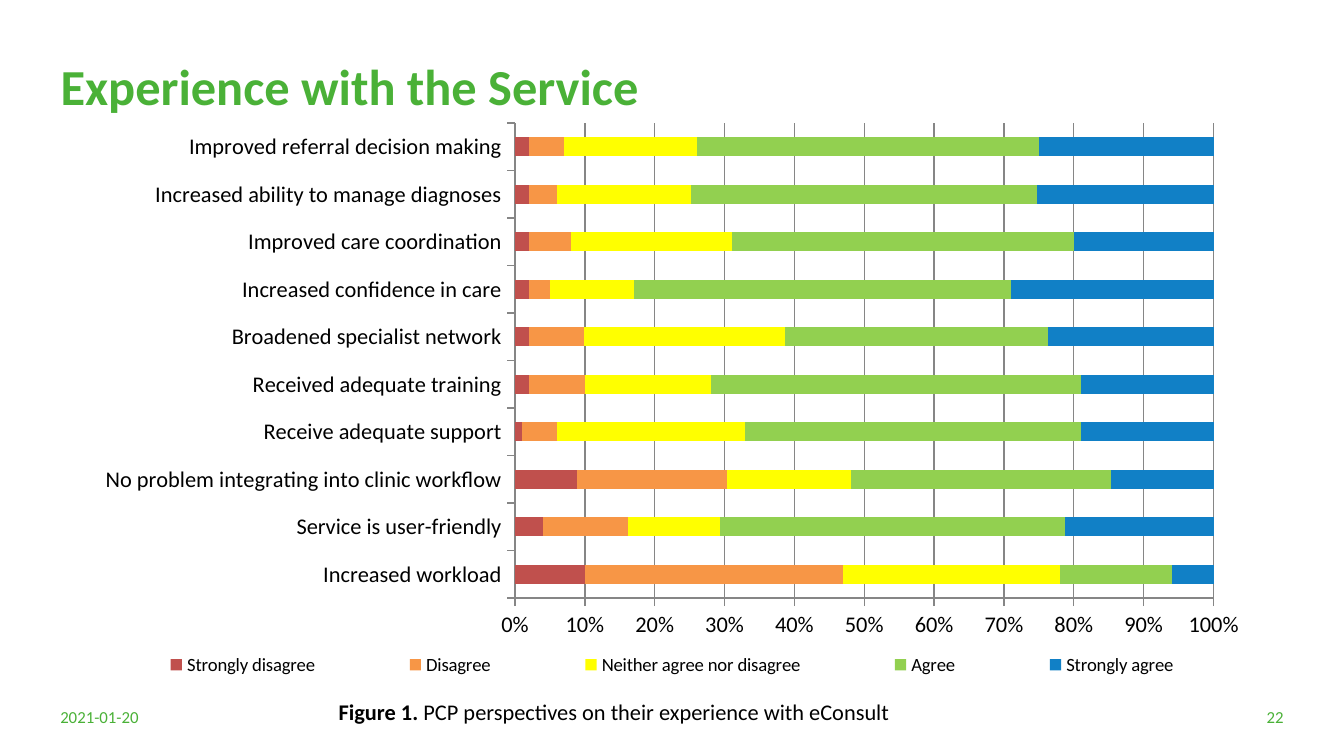
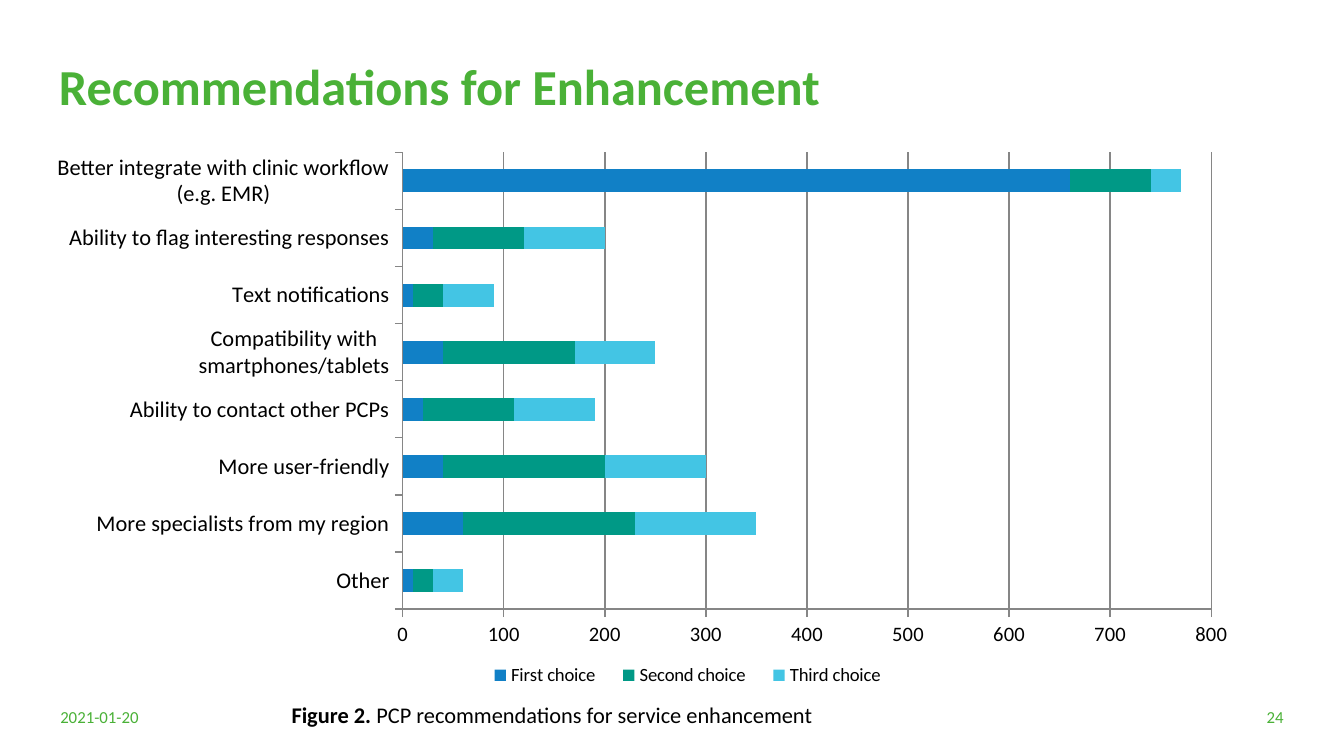
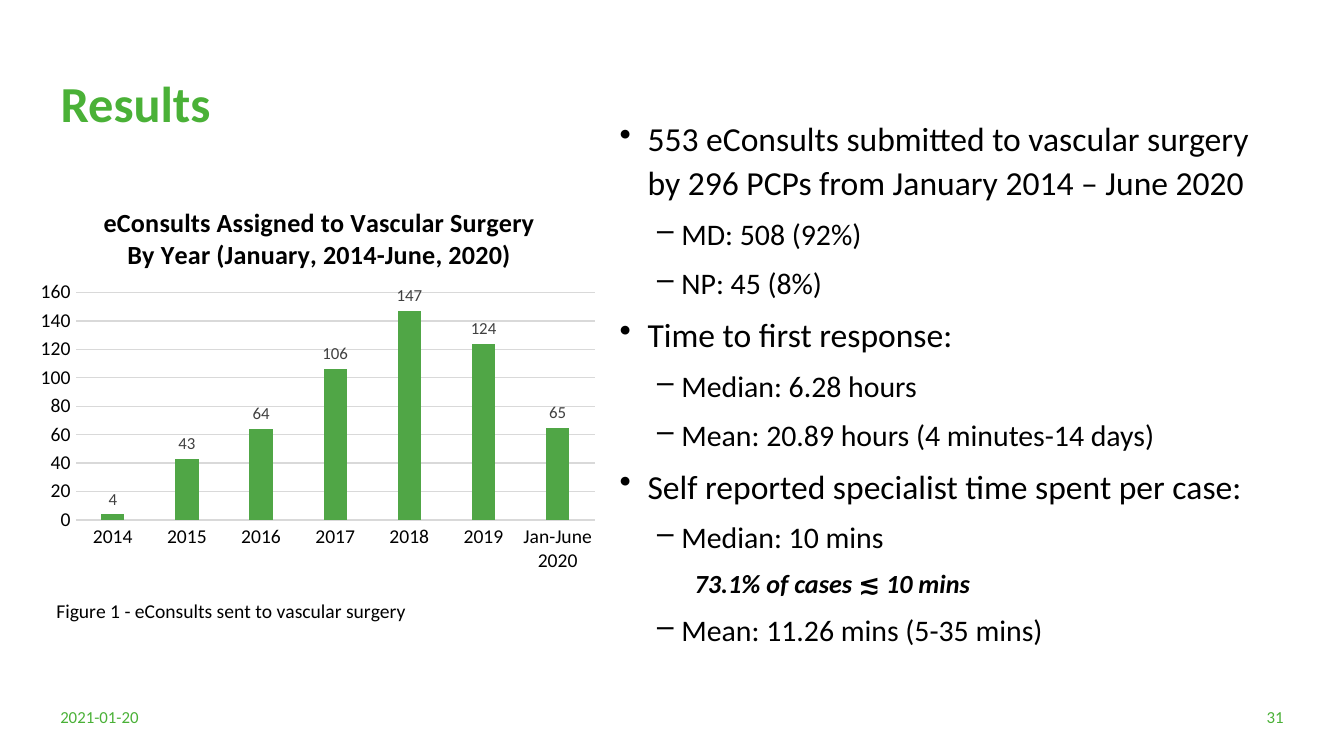
from lxml import etree
from pptx import Presentation
from pptx.chart.data import CategoryChartData
from pptx.dml.color import RGBColor
from pptx.enum.chart import XL_CHART_TYPE, XL_LABEL_POSITION, XL_LEGEND_POSITION, XL_TICK_MARK
from pptx.enum.text import MSO_ANCHOR, MSO_AUTO_SIZE, PP_ALIGN
from pptx.oxml import parse_xml
from pptx.oxml.ns import nsdecls, qn
from pptx.util import Cm, Pt

FONT = "Calibri"
GREEN, BLACK, GREY, PALE_GREY = "4AB137", "000000", "868686", "D9D9D9"
BLUE = "1180C6"
DATE = "2021-01-20"

AGREEMENT_CATEGORIES = [
    "Increased workload", "Service is user-friendly",
    "No problem integrating into clinic workflow", "Receive adequate support",
    "Received adequate training", "Broadened specialist network",
    "Increased confidence in care", "Improved care coordination",
    "Increased ability to manage diagnoses", "Improved referral decision making",
]
AGREEMENT_SERIES = [
    ("Strongly disagree", "C0504D", [10, 4, 9, 1, 2, 2, 2, 2, 2, 2]),
    ("Disagree", "F79646", [37, 12, 22, 5, 8, 8, 3, 6, 4, 5]),
    ("Neither agree nor disagree", "FFFF00", [31, 13, 18, 27, 18, 29, 12, 23, 19, 19]),
    ("Agree", "92D050", [16, 49, 38, 48, 53, 38, 54, 49, 49, 49]),
    ("Strongly agree", BLUE, [6, 21, 15, 19, 19, 24, 29, 20, 25, 25]),
]
ENHANCEMENT_CATEGORIES = [
    "Other", "More specialists from my region", "More user-friendly",
    "Ability to contact other PCPs", "Compatibility with smartphones/tablets",
    "Text notifications", "Ability to flag interesting responses",
    "Better integrate with clinic workflow (e.g. EMR)",
]
ENHANCEMENT_SERIES = [
    ("First choice", BLUE, [10, 60, 40, 20, 40, 10, 30, 660]),
    ("Second choice", "009986", [20, 170, 160, 90, 130, 30, 90, 80]),
    ("Third choice", "43C5E4", [30, 120, 100, 80, 80, 50, 80, 30]),
]
YEARS = ["2014", "2015", "2016", "2017", "2018", "2019", "Jan-June 2020"]
YEAR_SERIES = [("Series 1", "50A646", [4, 43, 64, 106, 147, 124, 65])]

# Outline level: bullet, left margin and first-line indent in cm, font format
LEVELS = [
    ("•", 0.53, -0.53, {"size": Pt(18)}),
    ("–", 1.17, -0.46, {"size": Pt(16)}),
    (None, 1.42, 0, {"size": Pt(14), "bold": True, "italic": True}),
]
RESULTS = [
    (0, "553 eConsults submitted to vascular surgery by 296 PCPs from January 2014 – June 2020"),
    (1, "MD: 508 (92%)"),
    (1, "NP: 45 (8%)"),
    (0, "Time to first response:"),
    (1, "Median: 6.28 hours"),
    (1, "Mean: 20.89 hours (4 minutes-14 days)"),
    (0, "Self reported specialist time spent per case:"),
    (1, "Median: 10 mins"),
    (2, "73.1% of cases ≲ 10 mins"),
    (1, "Mean: 11.26 mins (5-35 mins)"),
]


def set_values(target, values):
    for name, value in values.items():
        setattr(target, name, value)


def rgb(color):
    return RGBColor.from_string(color)


def format_font(font, color=BLACK, **values):
    set_values(font, {"name": FONT, **values})
    font.color.rgb = rgb(color)


def add_run(paragraph, text, **values):
    run = paragraph.add_run()
    run.text = text
    format_font(run.font, **values)


def add_text_box(slide, box, **frame_values):
    frame = slide.shapes.add_textbox(*map(Cm, box)).text_frame
    set_values(frame, {"word_wrap": True, **frame_values})
    return frame


def add_title_slide(presentation, title, number, left=0.89, top=0.43):
    """Add a slide with its title, date and slide number."""
    slide = presentation.slides.add_slide(presentation.slide_layouts[5])
    shape = slide.shapes.title
    position = dict(zip(("left", "top", "width", "height"), map(Cm, (left, top, 23.62, 2.59))))
    set_values(shape, position)
    set_values(shape.text_frame, {"vertical_anchor": MSO_ANCHOR.MIDDLE, "word_wrap": True,
                                  "auto_size": MSO_AUTO_SIZE.NONE})
    paragraph = shape.text_frame.paragraphs[0]
    set_values(paragraph, {"alignment": PP_ALIGN.LEFT, "line_spacing": 0.8})
    add_run(paragraph, title, size=Pt(27), bold=True, color=GREEN)

    for text, footer_left, width, alignment in ((DATE, 0.89, 2.74, PP_ALIGN.LEFT),
                                                (number, 23.27, 1.24, PP_ALIGN.RIGHT)):
        frame = add_text_box(slide, (footer_left, 13.28, width, 0.58),
                             vertical_anchor=MSO_ANCHOR.BOTTOM)
        paragraph = frame.paragraphs[0]
        paragraph.alignment = alignment
        add_run(paragraph, text, size=Pt(9), color=GREEN)
    return slide


def add_caption(slide, box, label, text):
    frame = add_text_box(slide, box, auto_size=MSO_AUTO_SIZE.SHAPE_TO_FIT_TEXT)
    paragraph = frame.paragraphs[0]
    add_run(paragraph, label, size=Pt(12), bold=True)
    add_run(paragraph, text, size=Pt(12), bold=False)


def add_outline(slide, box, items):
    frame = add_text_box(slide, box)
    for index, (level, text) in enumerate(items):
        bullet, margin, indent, font_values = LEVELS[level]
        paragraph = frame.add_paragraph() if index else frame.paragraphs[0]
        set_values(paragraph, {"level": level, "line_spacing": 1.1,
                               "space_before": Pt(5.1 if index else 0)})
        properties = paragraph._p.get_or_add_pPr()
        properties.set("marL", str(Cm(margin)))
        properties.set("indent", str(Cm(indent)))
        if bullet:
            etree.SubElement(properties, qn("a:buChar"), char=bullet)
        else:
            etree.SubElement(properties, qn("a:buNone"))
        add_run(paragraph, text, **font_values)


def set_layout(element, index, inner=False, **fractions):
    """Place a chart part by fractions of the chart's width and height."""
    for layout in element.findall(qn("c:layout")):
        element.remove(layout)
    target = '<c:layoutTarget val="inner"/>' if inner else ""
    modes = "".join(f'<c:{key}Mode val="edge"/>' for key in "xy")
    values = "".join(f'<c:{key} val="{value}"/>' for key, value in fractions.items())
    element.insert(index, parse_xml(
        f'<c:layout {nsdecls("c")}><c:manualLayout>{target}{modes}{values}'
        "</c:manualLayout></c:layout>"))


def format_axis(axis, size, line, tick):
    axis.major_tick_mark = tick
    axis.minor_tick_mark = XL_TICK_MARK.NONE
    format_font(axis.tick_labels.font, size=Pt(size))
    if line:
        axis.format.line.color.rgb = rgb(line)
        axis.format.line.width = Pt(0.75)
    else:
        axis.format.line.fill.background()


def add_bar_chart(slide, kind, box, categories, series_rows, plot_area, gap, overlap,
                  line, tick, sizes, value_line, scale):
    data = CategoryChartData()
    data.categories = categories
    for name, _, values in series_rows:
        data.add_series(name, values)
    chart = slide.shapes.add_chart(kind, *map(Cm, box), data).chart
    set_values(chart, {"has_title": False, "has_legend": False})
    format_font(chart.font, size=Pt(12))
    plot = chart.plots[0]
    set_values(plot, {"gap_width": gap, "overlap": overlap, "vary_by_categories": False})
    for series, (_, color, _) in zip(plot.series, series_rows):
        series.format.fill.solid()
        series.format.fill.fore_color.rgb = rgb(color)
    format_axis(chart.category_axis, sizes[0], line, tick)
    format_axis(chart.value_axis, sizes[1], value_line, tick)
    set_values(chart.value_axis, {"has_major_gridlines": True, **scale})
    gridline = chart.value_axis.major_gridlines.format.line
    gridline.color.rgb = rgb(line)
    gridline.width = Pt(0.75)
    set_layout(chart._chartSpace.chart.plotArea, 0, inner=True, **plot_area)
    return chart


def add_stacked_chart(slide, kind, box, categories, series_rows, plot_area, legend_area,
                      value_size, scale):
    chart = add_bar_chart(slide, kind, box, categories, series_rows, plot_area, 150, 100,
                          GREY, XL_TICK_MARK.OUTSIDE, (12, value_size), GREY, scale)
    chart.has_legend = True
    set_values(chart.legend, {"position": XL_LEGEND_POSITION.BOTTOM,
                              "include_in_layout": False})
    format_font(chart.legend.font, size=Pt(10))
    set_layout(chart.legend._element, 1, **legend_area)
    return chart


def add_chart_heading(title, text, x, y, **font_values):
    add_run(title.text_frame.paragraphs[0], text, **font_values)
    set_layout(title._element, 1, x=x, y=y)


def add_year_chart(slide):
    chart = add_bar_chart(
        slide, XL_CHART_TYPE.COLUMN_CLUSTERED, (0.56, 3.33, 10.9, 8.79), YEARS, YEAR_SERIES,
        {"x": 0.08, "y": 0.25, "w": 0.9, "h": 0.49}, 219, -27, PALE_GREY,
        XL_TICK_MARK.NONE, (10.5, 10.5), None,
        {"minimum_scale": 0, "maximum_scale": 160, "major_unit": 20})
    add_chart_heading(chart.chart_title,
                      "eConsults Assigned to Vascular Surgery By Year (January, 2014-June, 2020)",
                      0.12, 0.05, size=Pt(14), bold=True)
    add_chart_heading(chart.category_axis.axis_title,
                      "Figure 1 - eConsults sent to vascular surgery",
                      0.04, 0.9, size=Pt(10.5), bold=False)
    labels = chart.plots[0].series[0].data_labels
    set_values(labels, {"show_value": True, "position": XL_LABEL_POSITION.OUTSIDE_END})
    format_font(labels.font, size=Pt(9), color="404040")


def main():
    presentation = Presentation()
    set_values(presentation, {"slide_width": Cm(25.4), "slide_height": Cm(14.29)})

    slide = add_title_slide(presentation, "Experience with the Service", "22")
    chart = add_stacked_chart(
        slide, XL_CHART_TYPE.BAR_STACKED_100, (1.55, 2.11, 22.3, 10.95),
        AGREEMENT_CATEGORIES, AGREEMENT_SERIES,
        {"x": 0.367, "y": 0.02, "w": 0.592, "h": 0.82},
        {"x": 0, "y": 0.92, "w": 1, "h": 0.07}, 12, {"major_unit": 0.1})
    set_values(chart.value_axis.tick_labels,
               {"number_format": "0%", "number_format_is_linked": False})
    add_caption(slide, (6.15, 13.08, 11.35, 0.76), "Figure 1. ",
                "PCP perspectives on their experience with eConsult")

    slide = add_title_slide(presentation, "Recommendations for Enhancement", "24", left=0.86)
    add_stacked_chart(
        slide, XL_CHART_TYPE.BAR_STACKED, (0.86, 2.67, 22.81, 10.57),
        ENHANCEMENT_CATEGORIES, ENHANCEMENT_SERIES,
        {"x": 0.296, "y": 0.02, "w": 0.67, "h": 0.817},
        {"x": 0.354, "y": 0.92, "w": 0.356, "h": 0.07}, 11,
        {"minimum_scale": 0, "maximum_scale": 800, "major_unit": 100})
    add_caption(slide, (5.26, 13.13, 11.94, 0.76), "Figure 2. ",
                "PCP recommendations for service enhancement")

    slide = add_title_slide(presentation, "Results", "31", top=0.74)
    add_outline(slide, (11.46, 2.03, 12.45, 11.05), RESULTS)
    add_year_chart(slide)

    presentation.save("out.pptx")


if __name__ == "__main__":
    main()
